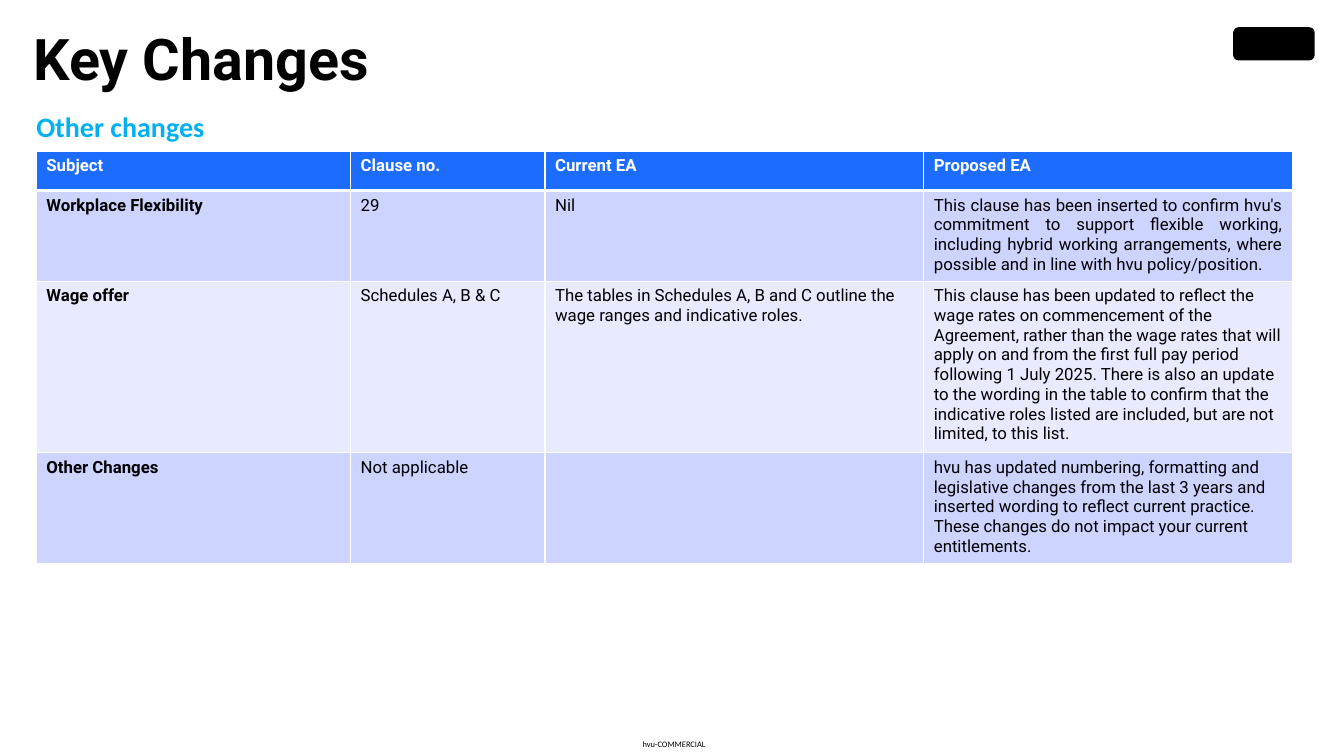
from dataclasses import dataclass

from lxml import etree
from pptx import Presentation
from pptx.dml.color import RGBColor
from pptx.enum.shapes import MSO_SHAPE
from pptx.enum.text import MSO_ANCHOR, PP_ALIGN
from pptx.oxml.ns import qn
from pptx.util import Inches, Pt

ROUNDED = MSO_SHAPE.ROUNDED_RECTANGLE
TOP = MSO_ANCHOR.TOP
LEFT, CENTER, JUSTIFY = PP_ALIGN.LEFT, PP_ALIGN.CENTER, PP_ALIGN.JUSTIFY


@dataclass(frozen=True)
class Theme:
    black: str = "000000"
    white: str = "FFFFFF"
    accent: str = "00B0F0"
    header: str = "1B6CFF"
    bands: tuple = ("CDD4FF", "E8EBFF")
    heading_font: str = "Roboto"
    label_font: str = "Calibri"
    title_size: float = 41
    subtitle_size: float = 20
    table_size: float = 12
    footer_size: float = 6


THEME = Theme()
COLUMN_WIDTHS = (3.12, 1.93, 3.76, 3.66)
ROW_HEIGHTS = (0.39, 0.88, 1.65, 1.08)
CHANGES = (
    ("Subject", "Clause no.", "Current EA", "Proposed EA"),
    ("Workplace Flexibility", "29", "Nil",
     "This clause has been inserted to confirm hvu's commitment to support "
     "flexible working, including hybrid working arrangements, where possible "
     "and in line with hvu policy/position."),
    ("Wage offer", "Schedules A, B & C",
     "The tables in Schedules A, B and C outline the wage ranges and indicative roles.",
     "This clause has been updated to reflect the wage rates on commencement of "
     "the Agreement, rather than the wage rates that will apply on and from the "
     "first full pay period following 1 July 2025. There is also an update to "
     "the wording in the table to confirm that the indicative roles listed are "
     "included, but are not limited, to this list."),
    ("Other Changes", "Not applicable", "",
     "hvu has updated numbering, formatting and legislative changes from the "
     "last 3 years and inserted wording to reflect current practice. These "
     "changes do not impact your current entitlements."),
)


def format_paragraph(p, font, size, color, bold=False, align=LEFT):
    p.alignment = align
    p.font.name = font
    p.font.size = Pt(size)
    p.font.bold = bold
    p.font.color.rgb = RGBColor.from_string(color)


def fill_frame(tf, text, *style, **options):
    tf.margin_left = tf.margin_right = tf.margin_top = tf.margin_bottom = 0
    tf.word_wrap = True
    tf.vertical_anchor = TOP
    p = tf.paragraphs[0]
    p.text = text
    format_paragraph(p, *style, **options)
    return p


def add_title(s, text, x, y, w, h):
    sp = s.shapes.title
    sp.left, sp.top, sp.width, sp.height = map(Inches, (x, y, w, h))
    p = fill_frame(sp.text_frame, text, THEME.heading_font, THEME.title_size,
                   THEME.black, bold=True)
    p.line_spacing = 0.85


def add_label(s, text, x, y, w, h, size, color, **options):
    sp = s.shapes.add_textbox(*map(Inches, (x, y, w, h)))
    fill_frame(sp.text_frame, text, THEME.label_font, size, color, **options)


def add_brand_mark(s, x, y, w, h):
    sp = s.shapes.add_shape(ROUNDED, *map(Inches, (x, y, w, h)))
    sp.shadow.inherit = False
    sp.fill.solid()
    sp.fill.fore_color.rgb = RGBColor.from_string(THEME.black)
    sp.line.fill.background()


def set_borders(cell, **widths):
    tc_pr = cell._tc.get_or_add_tcPr()
    for side in "LRTB":
        ln = etree.SubElement(tc_pr, qn(f"a:ln{side}"), w=str(Pt(widths.get(side, 1))))
        fill = etree.SubElement(ln, qn("a:solidFill"))
        etree.SubElement(fill, qn("a:srgbClr"), val=THEME.white)


def format_cell(cell, text, row, col):
    header = row == 0
    set_borders(cell, T=3 if row == 1 else 1, B=3 if header else 1)
    cell.fill.solid()
    fill = THEME.header if header else THEME.bands[(row - 1) % 2]
    cell.fill.fore_color.rgb = RGBColor.from_string(fill)
    p = cell.text_frame.paragraphs[0]
    p.text = text
    format_paragraph(p, THEME.heading_font, THEME.table_size,
                     THEME.white if header else THEME.black,
                     bold=header or col == 0,
                     align=JUSTIFY if (row, col) == (1, 3) else LEFT)


def add_changes_table(s, x, y, w, h):
    frame = s.shapes.add_table(len(CHANGES), len(COLUMN_WIDTHS), *map(Inches, (x, y, w, h)))
    table = frame.table
    for column, width in zip(table.columns, COLUMN_WIDTHS):
        column.width = Inches(width * w / sum(COLUMN_WIDTHS))
    for row, height in zip(table.rows, ROW_HEIGHTS):
        row.height = Inches(height * h / sum(ROW_HEIGHTS))
    for i, texts in enumerate(CHANGES):
        for j, text in enumerate(texts):
            format_cell(table.cell(i, j), text, i, j)


def build_key_changes(prs):
    s = prs.slides.add_slide(prs.slide_layouts[5])
    add_label(s, "hvu-COMMERCIAL", 6.3, 7.33, 0.77, 0.1, THEME.footer_size,
              THEME.black, align=CENTER)
    add_brand_mark(s, 12.23, 0.27, 0.81, 0.33)
    add_title(s, "Key Changes", 0.33, 0.33, 11.53, 1.04)
    add_label(s, "Other changes", 0.36, 1.09, 2.38, 0.53, THEME.subtitle_size,
              THEME.accent, bold=True)
    add_changes_table(s, 0.36, 1.5, 12.46, 4)


def main():
    prs = Presentation()
    prs.slide_width, prs.slide_height = Inches(13.33), Inches(7.5)
    build_key_changes(prs)
    prs.save("out.pptx")


if __name__ == "__main__":
    main()
